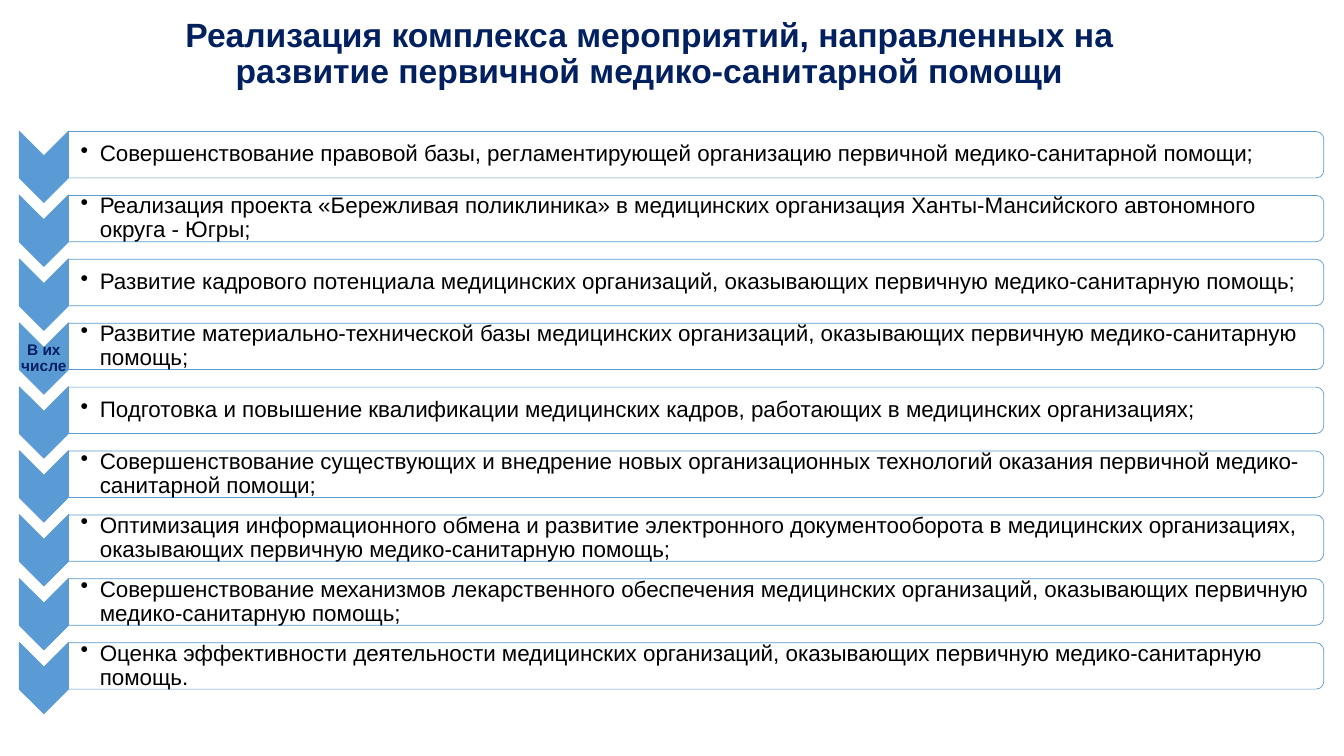
from lxml.etree import SubElement
from pptx import Presentation
from pptx.dml.color import RGBColor
from pptx.enum.shapes import MSO_SHAPE as SHAPE
from pptx.enum.text import MSO_ANCHOR as ANCHOR, PP_ALIGN as ALIGN
from pptx.oxml.ns import qn
from pptx.util import Inches, Pt

TITLE = ("Реализация комплекса мероприятий, направленных на "
         "развитие первичной медико-санитарной помощи")
MEASURES = [
    "Совершенствование правовой базы, регламентирующей организацию первичной медико-санитарной помощи;",
    "Реализация проекта «Бережливая поликлиника» в медицинских организация "
    "Ханты-Мансийского автономного округа - Югры;",
    "Развитие кадрового потенциала медицинских организаций, оказывающих первичную медико-санитарную помощь;",
    "Развитие материально-технической базы медицинских организаций, "
    "оказывающих первичную медико-санитарную помощь;",
    "Подготовка и повышение квалификации медицинских кадров, работающих в медицинских организациях;",
    "Совершенствование существующих и внедрение новых организационных технологий "
    "оказания первичной медико-санитарной помощи;",
    "Оптимизация информационного обмена и развитие электронного документооборота "
    "в медицинских организациях, оказывающих первичную медико-санитарную помощь;",
    "Совершенствование механизмов лекарственного обеспечения медицинских организаций, "
    "оказывающих первичную медико-санитарную помощь;",
    "Оценка эффективности деятельности медицинских организаций, "
    "оказывающих первичную медико-санитарную помощь.",
]
LABEL, LABEL_ROW = "В их числе", 3
NAVY, BLUE, WHITE, BLACK = "002060", "5B9BD5", "FFFFFF", "000000"

LEFT, BAR_LEFT = 0.19, 0.68
CHEVRON_W, CHEVRON_H = BAR_LEFT - LEFT, 0.71
BAR_W, BAR_H = 12.45, 0.46
TEXT_W, TEXT_H = 12.42, 0.41
FIRST_Y, PITCH = 1.535, 0.634  # centre of the first bar, row step
CHEVRON_DROP = 0.12


def rgb(color):
    return RGBColor.from_string(color)


def add_turned(kind, left, mid_y, w, h, fill):
    """Add a shape turned by 90 degrees that appears w wide and h high."""
    sp = slide.shapes.add_shape(kind, Inches(left + (w - h) / 2), Inches(mid_y - w / 2),
                                Inches(h), Inches(w))
    sp.rotation = 90
    sp.shadow.inherit = False
    sp.fill.solid()
    sp.fill.fore_color.rgb = rgb(fill)
    sp.line.color.rgb = rgb(BLUE)
    sp.line.width = Pt(0.5)
    return sp


def write(tf, text, size, color, bold=False, align=ALIGN.CENTER):
    tf.word_wrap = True
    tf.vertical_anchor = ANCHOR.MIDDLE
    p = tf.paragraphs[0]
    p.alignment = align
    p.line_spacing = 0.9
    r = p.add_run()
    r.text = text
    r.font.name = "Arial"
    r.font.size = Pt(size)
    r.font.bold = bold
    r.font.color.rgb = rgb(color)
    return p


def add_text(left, mid_y, w, h, inset_left=0.01):
    tf = slide.shapes.add_textbox(Inches(left), Inches(mid_y - h / 2),
                                  Inches(w), Inches(h)).text_frame
    tf.margin_left = Inches(inset_left)
    tf.margin_top = tf.margin_right = tf.margin_bottom = Inches(0.01)
    return tf


def add_bullet(p):
    pPr = p._p.get_or_add_pPr()
    pPr.set("marL", str(Inches(0.19)))
    pPr.set("indent", str(-Inches(0.19)))
    SubElement(pPr, qn("a:buChar")).set("char", "•")


prs = Presentation()
prs.slide_width, prs.slide_height = Inches(13.33), Inches(7.5)
slide = prs.slides.add_slide(prs.slide_layouts[5])

title = slide.shapes.title
title.left, title.top = Inches(1.45), Inches(-0.05)
title.width, title.height = Inches(9.98), Inches(1.18)
write(title.text_frame, TITLE, 24, NAVY, bold=True)

for row, measure in enumerate(MEASURES):
    y = FIRST_Y + row * PITCH
    chevron_y = y + CHEVRON_DROP
    add_turned(SHAPE.CHEVRON, LEFT, chevron_y, CHEVRON_W, CHEVRON_H, BLUE)
    if row == LABEL_ROW:
        write(add_text(LEFT, chevron_y, CHEVRON_W, 0.21), LABEL, 11, NAVY, bold=True)
    bar = add_turned(SHAPE.ROUND_2_SAME_RECTANGLE, BAR_LEFT, y, BAR_W, BAR_H, WHITE)
    color = bar.fill._xPr.find(qn("a:solidFill"))[0]
    SubElement(color, qn("a:alpha")).set("val", "90000")
    tf = add_text(BAR_LEFT, y, TEXT_W, TEXT_H, inset_left=0.12)
    add_bullet(write(tf, measure, 16, BLACK, align=ALIGN.LEFT))

prs.save("out.pptx")
